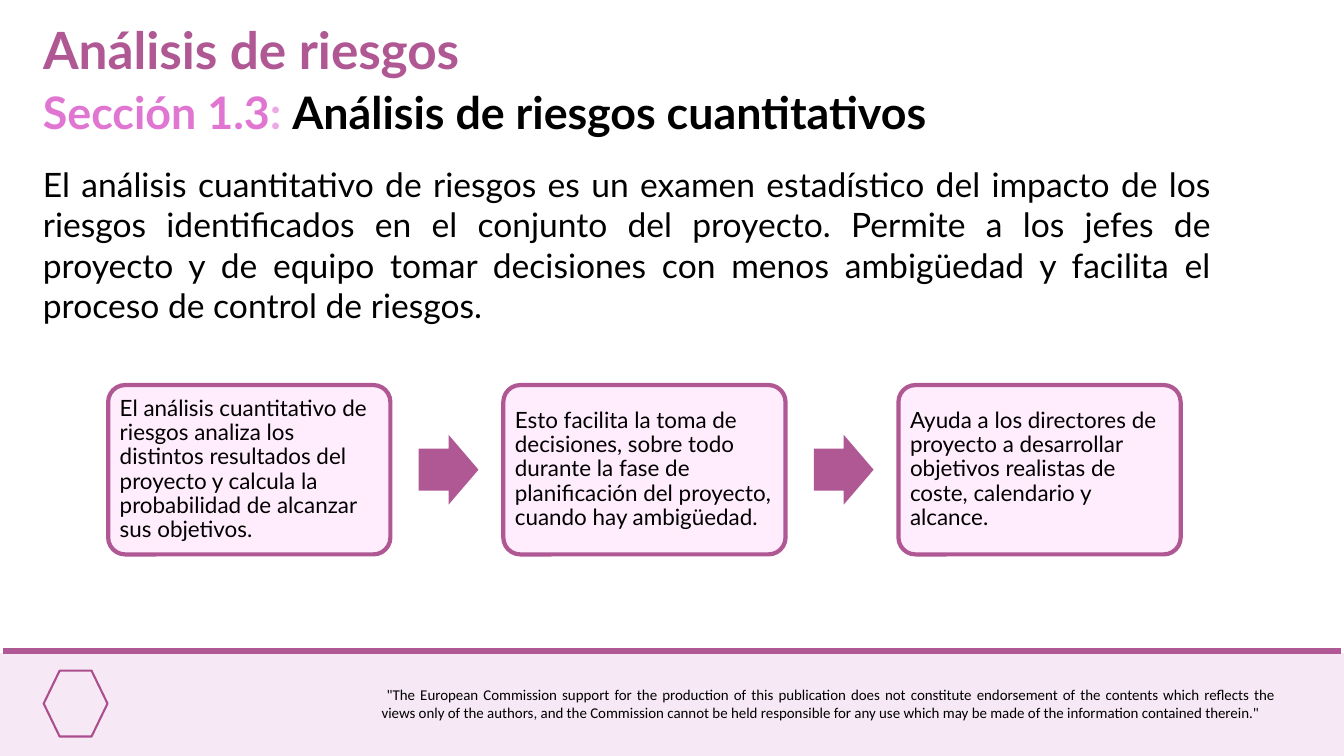
import pptx
import pptx.util
import pptx.dml.color
import pptx.enum.shapes
import pptx.enum.text
import pptx.oxml
import pptx.oxml.ns

Inches, Pt = pptx.util.Inches, pptx.util.Pt
SHAPES = pptx.enum.shapes.MSO_SHAPE
ALIGN = pptx.enum.text.PP_ALIGN
ANCHOR = pptx.enum.text.MSO_ANCHOR

COLORS = {"plum": "B05894", "icon": "AB4E8E", "pink": "E076D1", "pale pink": "ECAAE3",
          "card": "FFECFC", "band": "F6E9F5", "black": "000000"}

TITLE = "Análisis de riesgos"
SECTION = [("Sección 1.3", "pink"), (": ", "pale pink"),
           ("Análisis de riesgos cuantitativos", "black")]
BODY = ("El análisis cuantitativo de riesgos es un examen estadístico del impacto de los riesgos "
        "identificados en el conjunto del proyecto. Permite a los jefes de proyecto y de equipo "
        "tomar decisiones con menos ambigüedad y facilita el proceso de control de riesgos.")
STEPS = [
    "El análisis cuantitativo de riesgos analiza los distintos resultados del proyecto y calcula "
    "la probabilidad de alcanzar sus objetivos.",
    "Esto facilita la toma de decisiones, sobre todo durante la fase de planificación del "
    "proyecto, cuando hay ambigüedad.",
    "Ayuda a los directores de proyecto a desarrollar objetivos realistas de coste, calendario "
    "y alcance.",
]
DISCLAIMER = (" \"The European Commission support for the production of this publication does not "
              "constitute endorsement of the contents which reflects the views only of the "
              "authors, and the Commission cannot be held responsible for any use which may be "
              "made of the information contained therein.\"")

WIDTH, HEIGHT = 20, 11.25
MARGIN = 0.54
BAND_TOP = 9.72
CARD_LEFT, CARD_TOP, CARD_WIDTH, CARD_HEIGHT = 1.61, 5.73, 4.2, 2.52
CARD_PITCH = 1.4 * CARD_WIDTH
ARROW_WIDTH, ARROW_HEIGHT = 0.89, 1.04
ARROW_GAP = 0.1 * CARD_WIDTH


def rgb(name):
    return pptx.dml.color.RGBColor.from_string(COLORS[name])


def place(shape, left, top, width, height):
    shape.left, shape.top = Inches(left), Inches(top)
    shape.width, shape.height = Inches(width), Inches(height)


def write(shape, runs, size, font="Lato", bold=False, align=ALIGN.LEFT, anchor=ANCHOR.TOP):
    """Fill a shape with one paragraph of (text, colour) runs."""
    frame = shape.text_frame
    frame.word_wrap = True
    frame.auto_size = pptx.enum.text.MSO_AUTO_SIZE.NONE
    frame.vertical_anchor = anchor
    paragraph = frame.paragraphs[0]
    paragraph.alignment = align
    paragraph.font.size, paragraph.font.name, paragraph.font.bold = Pt(size), font, bold
    for text, color in runs:
        run = paragraph.add_run()
        run.text = text
        run.font.color.rgb = rgb(color)
    return paragraph


def add_text(slide, box, runs, size, **style):
    return write(slide.shapes.add_textbox(*map(Inches, box)), runs, size, **style)


def add_block(slide, kind, box, fill=None, line=None, line_width=0.75):
    shape = slide.shapes.add_shape(kind, *map(Inches, box))
    shape.shadow.inherit = False
    if fill:
        shape.fill.solid()
        shape.fill.fore_color.rgb = rgb(fill)
    else:
        shape.fill.background()
    if line:
        shape.line.color.rgb = rgb(line)
        shape.line.width = Pt(line_width)
    else:
        shape.line.fill.background()
    return shape


def add_footer(slide):
    add_block(slide, SHAPES.RECTANGLE, (0, BAND_TOP, WIDTH, HEIGHT - BAND_TOP), "band")
    y = Inches(BAND_TOP - 0.03)
    rule = slide.shapes.add_connector(pptx.enum.shapes.MSO_CONNECTOR.STRAIGHT,
                                      Inches(0.05), y, Inches(WIDTH - 0.05), y)
    rule.line.color.rgb = rgb("plum")
    rule.line.width = Pt(6.75)
    properties = rule._element.find(pptx.oxml.ns.qn("p:spPr"))
    properties.append(pptx.oxml.parse_xml(f'<a:effectLst {pptx.oxml.ns.nsdecls("a")}/>'))
    add_block(slide, SHAPES.HEXAGON, (0.65, 9.98, 0.95, 0.98), line="icon", line_width=2.25)
    add_text(slide, (5.58, 10.15, 13.5, 0.64), [(DISCLAIMER, "black")], 16,
             font="Calibri", align=ALIGN.JUSTIFY)


def add_steps(slide):
    arrow_top = CARD_TOP + (CARD_HEIGHT - ARROW_HEIGHT) / 2
    for index, text in enumerate(STEPS):
        left = CARD_LEFT + index * CARD_PITCH
        card = add_block(slide, SHAPES.ROUNDED_RECTANGLE,
                         (left, CARD_TOP, CARD_WIDTH, CARD_HEIGHT), "card", "plum", 4.5)
        card.adjustments[0] = 0.1
        frame = card.text_frame
        frame.margin_left = frame.margin_right = Inches(0.1)
        frame.margin_top = frame.margin_bottom = Inches(0.1)
        paragraph = write(card, [(text, "black")], 24, anchor=ANCHOR.MIDDLE)
        paragraph.line_spacing = 0.9
        if index < len(STEPS) - 1:
            arrow_left = left + CARD_WIDTH + ARROW_GAP
            arrow = add_block(slide, SHAPES.RIGHT_ARROW,
                              (arrow_left, arrow_top, ARROW_WIDTH, ARROW_HEIGHT), "plum")
            arrow.adjustments[0], arrow.adjustments[1] = 0.6, 0.5


def main():
    presentation = pptx.Presentation()
    presentation.slide_width, presentation.slide_height = Inches(WIDTH), Inches(HEIGHT)
    slide = presentation.slides.add_slide(presentation.slide_layouts.get_by_name("Title Only"))
    add_footer(slide)
    title = slide.shapes.title
    place(title, MARGIN, 0.22, 10.46, 1.03)
    write(title, [(TITLE, "plum")], 55, bold=True)
    add_text(slide, (MARGIN, 1.21, 14.87, 0.91), SECTION, 48, bold=True)
    add_text(slide, (MARGIN, 2.39, 17.58, 2.52), [(BODY, "black")], 36, align=ALIGN.JUSTIFY)
    add_steps(slide)
    presentation.save("out.pptx")


if __name__ == "__main__":
    main()
